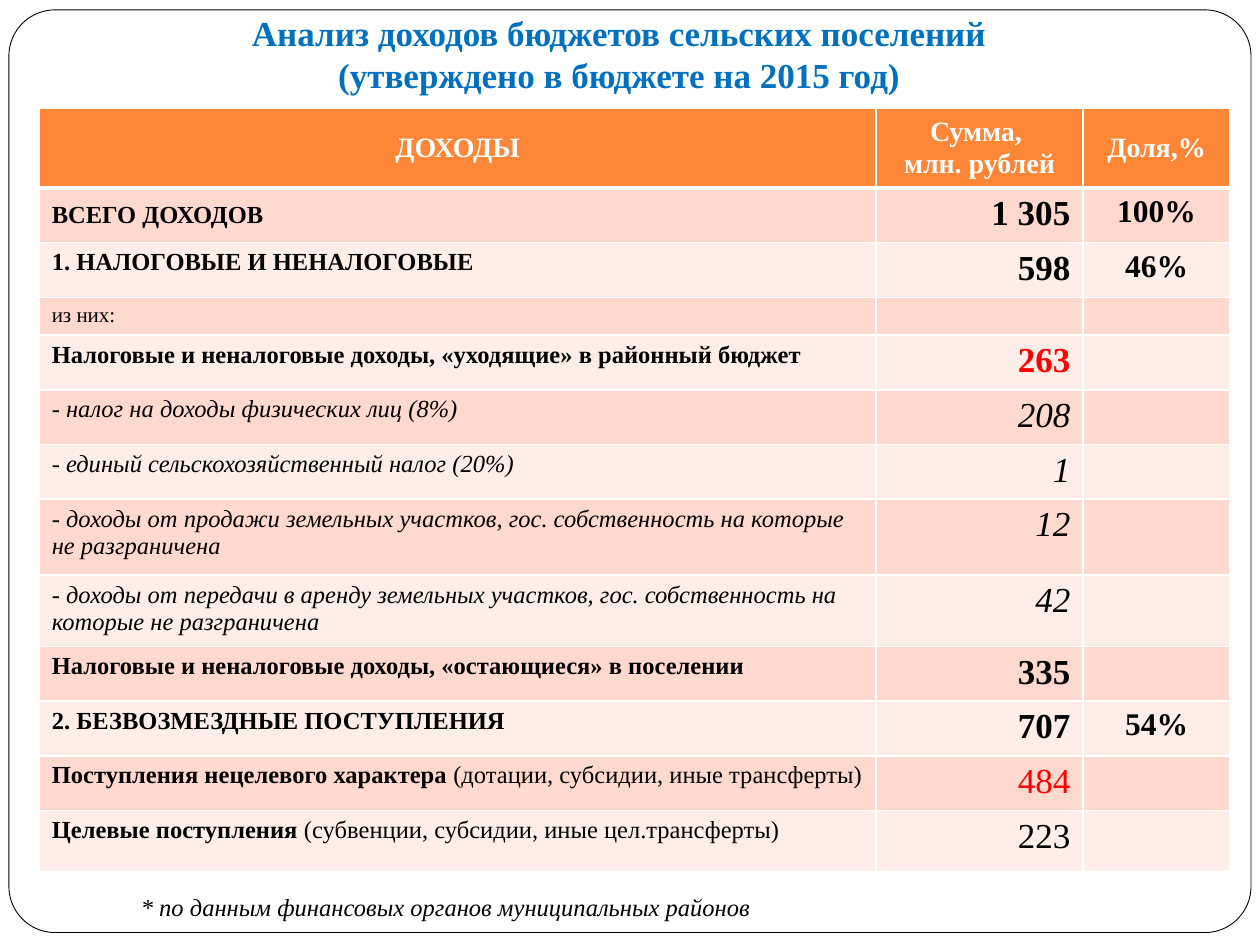
"""Build a slide with a table of rural settlement budget revenues."""
from lxml import etree
from pptx import Presentation
from pptx import util as u
from pptx.dml import color
from pptx.enum import shapes, text
from pptx.oxml import ns

FONT = "Times New Roman"
L, C, R = text.PP_ALIGN.LEFT, text.PP_ALIGN.CENTER, text.PP_ALIGN.RIGHT


def rgb(value):
    return color.RGBColor.from_string(value)


def write(tf, content, size=14, hue="000000", bold=False, italic=False, align=L):
    for i, line in enumerate(content.split("\n")):
        p = tf.paragraphs[0] if i == 0 else tf.add_paragraph()
        p.alignment = align
        for j, part in enumerate(line.split("|")):
            r = p.add_run()
            r.text = part
            r.font.name, r.font.size = FONT, u.Pt(size)
            r.font.bold, r.font.italic = bold and j == 0, italic
            r.font.color.rgb = rgb(hue)


prs = Presentation()
prs.slide_width, prs.slide_height = u.Cm(25.4), u.Cm(19.05)
slide = prs.slides.add_slide(prs.slide_layouts[6])

sp = slide.shapes.add_shape(shapes.MSO_SHAPE.ROUNDED_RECTANGLE,
                            u.Cm(0.18), u.Cm(0.2), u.Cm(25.04), u.Cm(18.6))
sp.adjustments[0] = 0.05
sp.shadow.inherit = False
sp.fill.solid()
sp.fill.fore_color.rgb = rgb("FFFFFF")
sp.line.color.rgb = rgb("000000")
sp.line.width = u.Pt(0.5)

sp = slide.shapes.add_textbox(u.Cm(1), u.Cm(0), u.Cm(23.14), u.Cm(2.18))
tf = sp.text_frame
tf.word_wrap = True
tf.vertical_anchor = text.MSO_ANCHOR.BOTTOM
tf.margin_bottom = u.Cm(0.25)
write(tf, "Анализ доходов бюджетов сельских поселений \n(утверждено в бюджете на 2015 год) ",
      size=20, hue="0070C0", bold=True, align=C)

BOLD, ITALIC, PLAIN = {"bold": True}, {"italic": True}, {}
RED = {"hue": "FF0000"}
# height in cm, label, amount, share, label format, amount format
rows = [
    (1.6, "ДОХОДЫ", "Сумма, \nмлн. рублей", "Доля,%", BOLD, BOLD),
    (1.03, "ВСЕГО ДОХОДОВ", "1 305", "100%", BOLD, BOLD),
    (1.04, "1. НАЛОГОВЫЕ И НЕНАЛОГОВЫЕ", "598", "46%", BOLD, BOLD),
    (0.71, "из них:", "", "", {"size": 12}, PLAIN),
    (1.04, "Налоговые и неналоговые доходы, «уходящие» в районный бюджет", "263", "",
     BOLD, BOLD | RED),
    (1.04, "- налог на доходы физических лиц (8%)", "208", "", ITALIC, ITALIC),
    (1.04, "- единый сельскохозяйственный налог (20%)", "1", "", ITALIC, ITALIC),
    (1.53, "- доходы от продажи земельных участков, гос. собственность на которые "
     "не разграничена", "12", "", ITALIC, ITALIC),
    (1.35, "- доходы от передачи в аренду земельных участков, гос. собственность на "
     "которые не разграничена", "42", "", ITALIC, ITALIC),
    (1.04, "Налоговые и неналоговые доходы, «остающиеся» в поселении", "335", "", BOLD, BOLD),
    (1.04, "2. БЕЗВОЗМЕЗДНЫЕ ПОСТУПЛЕНИЯ", "707", "54%", BOLD, BOLD),
    (1.04, "Поступления нецелевого характера |(дотации, субсидии, иные трансферты)", "484", "",
     BOLD, RED),
    (1.24, "Целевые поступления |(субвенции, субсидии, иные цел.трансферты)", "223", "",
     BOLD, PLAIN),
]
widths = [16.87, 4.17, 2.97]
table = slide.shapes.add_table(len(rows), len(widths), u.Cm(0.79), u.Cm(2.18),
                               u.Cm(sum(widths)), u.Cm(sum(row[0] for row in rows))).table
for column, width in zip(table.columns, widths):
    column.width = u.Cm(width)

for i, (height, label, amount, share, label_format, amount_format) in enumerate(rows):
    table.rows[i].height = u.Cm(height)
    formats = [label_format, {"size": 20, "align": R} | amount_format,
               {"size": 18, "align": C, "bold": True}]
    for j, (content, style) in enumerate(zip((label, amount, share), formats)):
        cell = table.cell(i, j)
        if i == 0:
            style = {"size": 16, "hue": "FFFFFF", "bold": True, "align": C}
        if i == 0 or (i, j) == (1, 0):
            cell.vertical_anchor = text.MSO_ANCHOR.MIDDLE
        if content:
            write(cell.text_frame, content, **style)
        else:
            p = cell.text_frame.paragraphs[0]
            etree.SubElement(p._p, ns.qn("a:endParaRPr"), sz="1200")
        tcPr = cell._tc.get_or_add_tcPr()
        for side in "LRTB":
            thick = (i, side) in ((0, "B"), (1, "T"))
            ln = etree.SubElement(tcPr, ns.qn("a:ln" + side), w=str(u.Pt(3 if thick else 1)))
            fill = etree.SubElement(ln, ns.qn("a:solidFill"))
            etree.SubElement(fill, ns.qn("a:srgbClr"), val="FFFFFF")
        cell.fill.solid()
        cell.fill.fore_color.rgb = rgb("FE8637" if i == 0 else ("FFEDE8", "FFD9CE")[i % 2])

sp = slide.shapes.add_textbox(u.Cm(2.59), u.Cm(17.86), u.Cm(17.27), u.Cm(0.86))
sp.text_frame.word_wrap = True
write(sp.text_frame, "* по данным финансовых органов муниципальных районов", italic=True)

prs.save("out.pptx")
